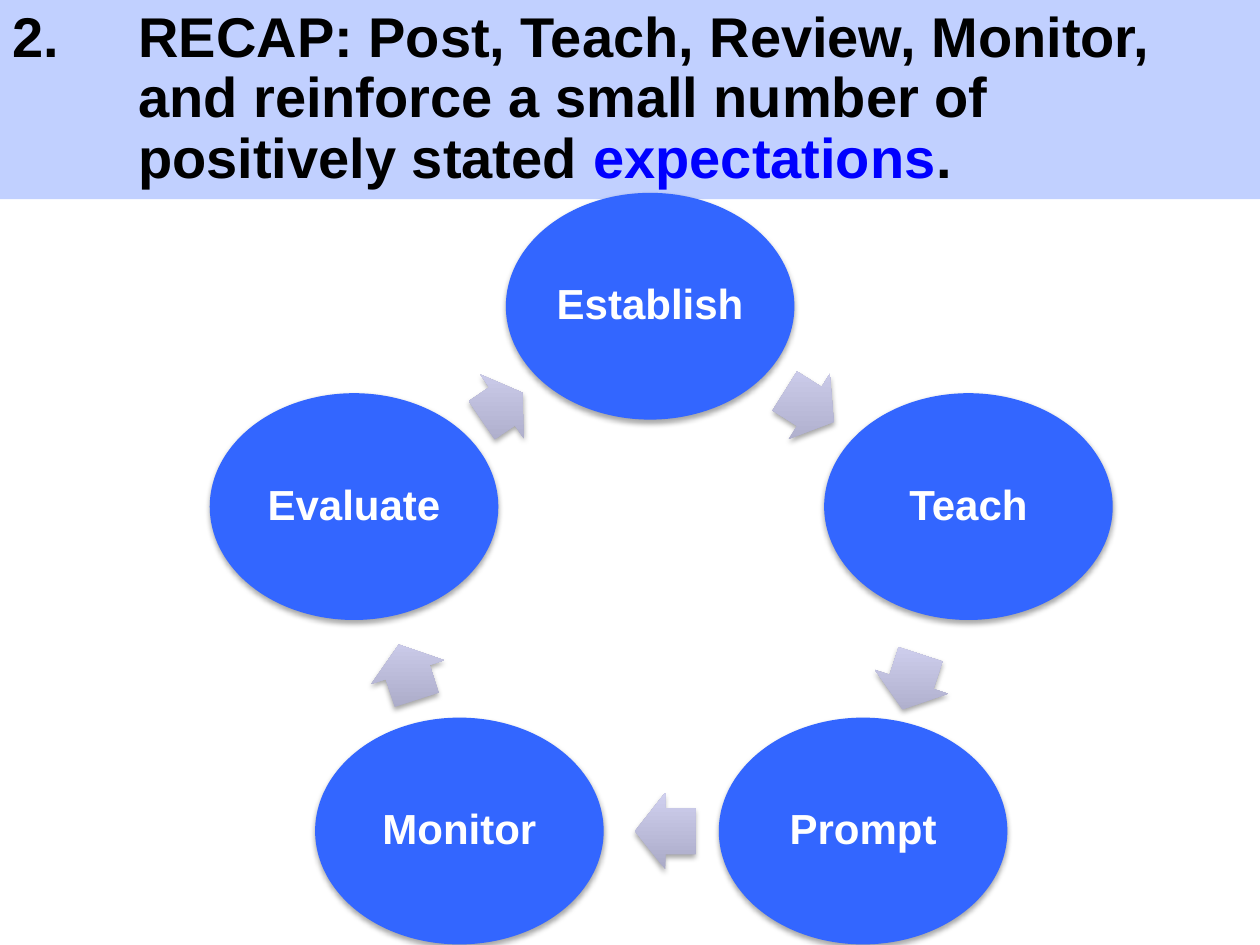
from dataclasses import dataclass

import math

import pptx
import pptx.dml.color
import pptx.enum.dml
import pptx.enum.shapes
import pptx.enum.text
import pptx.oxml
import pptx.oxml.ns
import pptx.util

Pt = pptx.util.Pt
RGB = pptx.dml.color.RGBColor.from_string
SHAPES = pptx.enum.shapes.MSO_SHAPE
ANCHOR = pptx.enum.text.MSO_ANCHOR
ALIGN = pptx.enum.text.PP_ALIGN


@dataclass(frozen=True)
class Theme:
    """Colours, font and type sizes of the slide."""
    font: str = "Arial"
    blue: str = "3366FF"
    accent: str = "0000FF"
    ink: str = "000000"
    paper: str = "FFFFFF"
    arrow_dark: str = "AAAAC7"
    arrow_light: str = "D0D0EF"
    title_size: int = 32
    label_size: int = 24


THEME = Theme()
STAGES = [
    ("Establish", 371.5, 175),
    ("Teach", 553.4, 289.5),
    ("Prompt", 493.2, 474.9),
    ("Monitor", 262.5, 474.9),
    ("Evaluate", 202.3, 289.5),
]
ARROWS = [(33.1, 0.5), (33.1, 0.54), (34.6, 0.49), (33.1, 0.49), (28.1, 0.5)]
STAGE_WIDTH, STAGE_HEIGHT, ARROW_HEIGHT = 164.9, 129.6, 43.9


def add_plain_shape(slide, kind, box):
    """Add a preset shape without outline in the box, given in points."""
    shape = slide.shapes.add_shape(kind, *(Pt(length) for length in box))
    shape.shadow.inherit = False
    shape.line.fill.background()
    return shape


def add_soft_shadow(shape):
    """Give the shape a soft shadow that falls straight down."""
    effects = shape._element.spPr.find(pptx.oxml.ns.qn("a:effectLst"))
    effects.append(pptx.oxml.parse_xml(
        f'<a:outerShdw {pptx.oxml.ns.nsdecls("a")} blurRad="{Pt(3.1)}" dist="{Pt(1.8)}" '
        'dir="5400000" rotWithShape="0"><a:srgbClr val="000000">'
        '<a:alpha val="35000"/></a:srgbClr></a:outerShdw>'))


def style_paragraph(paragraph, size, color):
    """Set the bold theme font on a paragraph."""
    font = paragraph.font
    font.name, font.size, font.bold = THEME.font, Pt(size), True
    font.color.rgb = RGB(color)


def add_title(slide, box):
    """Add the tinted title band with its hanging number."""
    band = add_plain_shape(slide, SHAPES.RECTANGLE, box)
    band.fill.solid()
    band.fill.fore_color.rgb = RGB(THEME.blue)
    color = band._element.spPr.find(".//" + pptx.oxml.ns.qn("a:srgbClr"))
    color.append(pptx.oxml.parse_xml(
        f'<a:alpha {pptx.oxml.ns.nsdecls("a")} val="30000"/>'))
    frame = band.text_frame
    frame.word_wrap = True
    frame.vertical_anchor = ANCHOR.MIDDLE
    frame.margin_top = frame.margin_bottom = 0
    paragraph = frame.paragraphs[0]
    paragraph.alignment = ALIGN.LEFT
    paragraph.line_spacing = 0.9
    properties = paragraph._p.get_or_add_pPr()
    properties.set("marL", str(Pt(72)))
    properties.set("indent", str(-Pt(72)))
    style_paragraph(paragraph, THEME.title_size, THEME.ink)
    paragraph.add_run().text = (
        "2.\tRECAP: Post, Teach, Review, Monitor, and reinforce "
        "a small number of positively stated ")
    keyword = paragraph.add_run()
    keyword.text = "expectations"
    keyword.font.color.rgb = RGB(THEME.accent)
    paragraph.add_run().text = "."


def add_stage(slide, label, box):
    """Add one labelled ellipse of the cycle."""
    ellipse = add_plain_shape(slide, SHAPES.OVAL, box)
    ellipse.fill.solid()
    ellipse.fill.fore_color.rgb = RGB(THEME.blue)
    add_soft_shadow(ellipse)
    frame = ellipse.text_frame
    frame.word_wrap = True
    frame.vertical_anchor = ANCHOR.MIDDLE
    frame.margin_left = frame.margin_right = Pt(2.4)
    frame.margin_top = frame.margin_bottom = Pt(2.4)
    paragraph = frame.paragraphs[0]
    paragraph.text = label
    paragraph.alignment = ALIGN.CENTER
    paragraph.line_spacing = 0.9
    style_paragraph(paragraph, THEME.label_size, THEME.paper)


def add_arrow(slide, box, angle):
    """Add one shaded block arrow turned to the angle in degrees."""
    arrow = add_plain_shape(slide, SHAPES.RIGHT_ARROW, box)
    arrow.adjustments[0], arrow.adjustments[1] = 0.6, 0.5
    arrow.rotation = angle
    arrow.fill.gradient()
    arrow.fill.gradient_angle = 90
    for stop, color in zip(arrow.fill.gradient_stops,
                           (THEME.arrow_dark, THEME.arrow_light)):
        stop.color.rgb = RGB(color)
    gradient = arrow._element.spPr.find(pptx.oxml.ns.qn("a:gradFill"))
    gradient.set("rotWithShape", "0")
    add_soft_shadow(arrow)


def centred_box(x, y, width, height):
    """Return the box of the given size around a centre."""
    return x - width / 2, y - height / 2, width, height


def add_cycle(slide):
    """Add the stages and, between neighbours, the arrows that link them."""
    following = STAGES[1:] + STAGES[:1]
    for (label, x, y), (_, next_x, next_y), (length, share) in zip(
            STAGES, following, ARROWS):
        add_stage(slide, label, centred_box(x, y, STAGE_WIDTH, STAGE_HEIGHT))
        run, rise = next_x - x, next_y - y
        box = centred_box(x + share * run, y + share * rise, length, ARROW_HEIGHT)
        add_arrow(slide, box, math.degrees(math.atan2(rise, run)) % 360)


def main():
    """Build and save the presentation."""
    presentation = pptx.Presentation()
    presentation.slide_width, presentation.slide_height = Pt(720), Pt(540)
    slide = presentation.slides.add_slide(presentation.slide_layouts[6])
    add_title(slide, (0, 0, 720, 113.8))
    add_cycle(slide)
    presentation.save("out.pptx")


if __name__ == "__main__":
    main()
